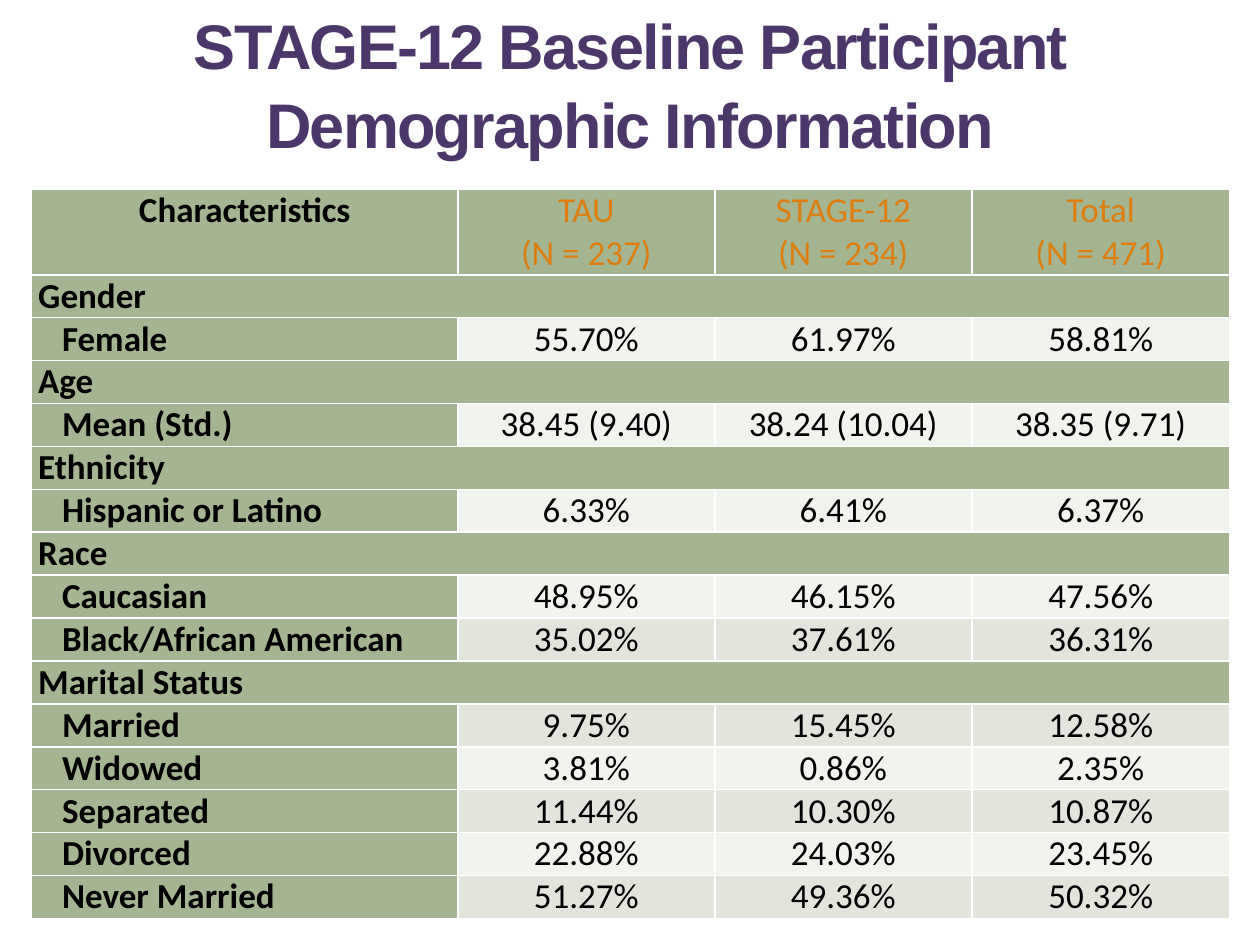
from dataclasses import dataclass

from lxml.etree import SubElement
from pptx import Presentation
from pptx.dml.color import RGBColor
from pptx.enum.text import MSO_ANCHOR as Anchor, PP_ALIGN as Align
from pptx.oxml.ns import qn
from pptx.util import Cm, Pt

COLOURS = {
    "title": "4C376B",
    "label_fill": "A5B592",
    "light_band": "F0F3EE",
    "dark_band": "E1E5DC",
    "border": "FFFFFF",
    "heading": "DD7E0E",
    "text": "000000",
}
COLUMN_WIDTHS = (8.59, 5.18, 5.18, 5.2)
HEADER_HEIGHT, ROW_HEIGHT = 1.5, 0.76
SIDE_MARGIN, LABEL_INDENT = 0.13, 0.48


@dataclass
class Row:
    label: str
    values: tuple[str, ...] = ()  # empty for a section heading


HEADINGS = ("TAU\n(N = 237)", "STAGE-12\n(N = 234)", "Total\n(N = 471)")
ROWS = (
    Row("Gender"),
    Row("Female", ("55.70%", "61.97%", "58.81%")),
    Row("Age"),
    Row("Mean (Std.)", ("38.45 (9.40)", "38.24 (10.04)", "38.35 (9.71)")),
    Row("Ethnicity"),
    Row("Hispanic or Latino", ("6.33%", "6.41%", "6.37%")),
    Row("Race"),
    Row("Caucasian", ("48.95%", "46.15%", "47.56%")),
    Row("Black/African American", ("35.02%", "37.61%", "36.31%")),
    Row("Marital Status"),
    Row("Married", ("9.75%", "15.45%", "12.58%")),
    Row("Widowed", ("3.81%", "0.86%", "2.35%")),
    Row("Separated", ("11.44%", "10.30%", "10.87%")),
    Row("Divorced", ("22.88%", "24.03%", "23.45%")),
    Row("Never Married", ("51.27%", "49.36%", "50.32%")),
)


def colour(name: str) -> RGBColor:
    return RGBColor.from_string(COLOURS[name])


def style_cell(cell, fill: str) -> None:
    """Set the margins, borders and fill of a cell."""
    cell.margin_left = cell.margin_right = Cm(SIDE_MARGIN)
    cell.margin_top = cell.margin_bottom = 0
    properties = cell._tc.get_or_add_tcPr()
    for side in ("a:lnL", "a:lnR", "a:lnT", "a:lnB"):
        line = SubElement(properties, qn(side), w=str(Pt(1)))
        solid = SubElement(line, qn("a:solidFill"))
        SubElement(solid, qn("a:srgbClr"), val=COLOURS["border"])
    cell.fill.solid()
    cell.fill.fore_color.rgb = colour(fill)


def write_cell(cell, text: str, bold: bool = False,
               align: Align = Align.CENTER, ink: str = "text") -> None:
    cell.text = text
    for paragraph in cell.text_frame.paragraphs:
        paragraph.alignment = align
        font = paragraph.font
        font.name, font.size, font.bold = "Calibri", Pt(20), bold
        font.color.rgb = colour(ink)


def add_demographics(slide) -> None:
    frame = slide.shapes.add_table(
        len(ROWS) + 1, len(COLUMN_WIDTHS), Cm(0.64), Cm(3.81),
        Cm(sum(COLUMN_WIDTHS)), Cm(HEADER_HEIGHT + ROW_HEIGHT * len(ROWS)))
    table = frame.table
    table.first_row = table.horz_banding = False
    for column, width in zip(table.columns, COLUMN_WIDTHS):
        column.width = Cm(width)
    for index, table_row in enumerate(table.rows):
        table_row.height = Cm(ROW_HEIGHT if index else HEADER_HEIGHT)

    # Header row
    for cell in table.rows[0].cells:
        style_cell(cell, "label_fill")
    write_cell(table.cell(0, 0), "Characteristics", bold=True)
    for column, heading in enumerate(HEADINGS, 1):
        write_cell(table.cell(0, column), heading, ink="heading")

    # Section headings and banded data rows
    for index, row in enumerate(ROWS, 1):
        band = "dark_band" if index % 2 else "light_band"
        for column, cell in enumerate(table.rows[index].cells):
            style_cell(cell, band if row.values and column else "label_fill")
        label = table.cell(index, 0)
        write_cell(label, row.label, bold=True, align=Align.LEFT)
        if row.values:
            label.margin_left = Cm(SIDE_MARGIN + LABEL_INDENT)
        else:
            label.merge(table.cell(index, len(COLUMN_WIDTHS) - 1))
        for column, value in enumerate(row.values, 1):
            write_cell(table.cell(index, column), value)


def add_title(slide, text: str) -> None:
    box = slide.shapes.add_textbox(Cm(0.64), Cm(0.2), Cm(24.13), Cm(3.18))
    text_frame = box.text_frame
    text_frame.word_wrap = True
    text_frame.vertical_anchor = Anchor.BOTTOM
    paragraph = text_frame.paragraphs[0]
    paragraph.alignment = Align.CENTER
    paragraph.line_spacing = 1.05
    font = paragraph.font
    font.name, font.size, font.bold = "Arial", Pt(36), True
    font.color.rgb = colour("title")
    run = paragraph.add_run()
    run.text = text
    run._r.get_or_add_rPr().set("spc", "-100")  # letters 1 pt closer


def main() -> None:
    presentation = Presentation()
    presentation.slide_width, presentation.slide_height = Cm(25.4), Cm(19.05)
    slide = presentation.slides.add_slide(presentation.slide_layouts[6])
    add_demographics(slide)
    add_title(slide, "STAGE-12 Baseline Participant Demographic Information")
    presentation.save("out.pptx")


if __name__ == "__main__":
    main()
